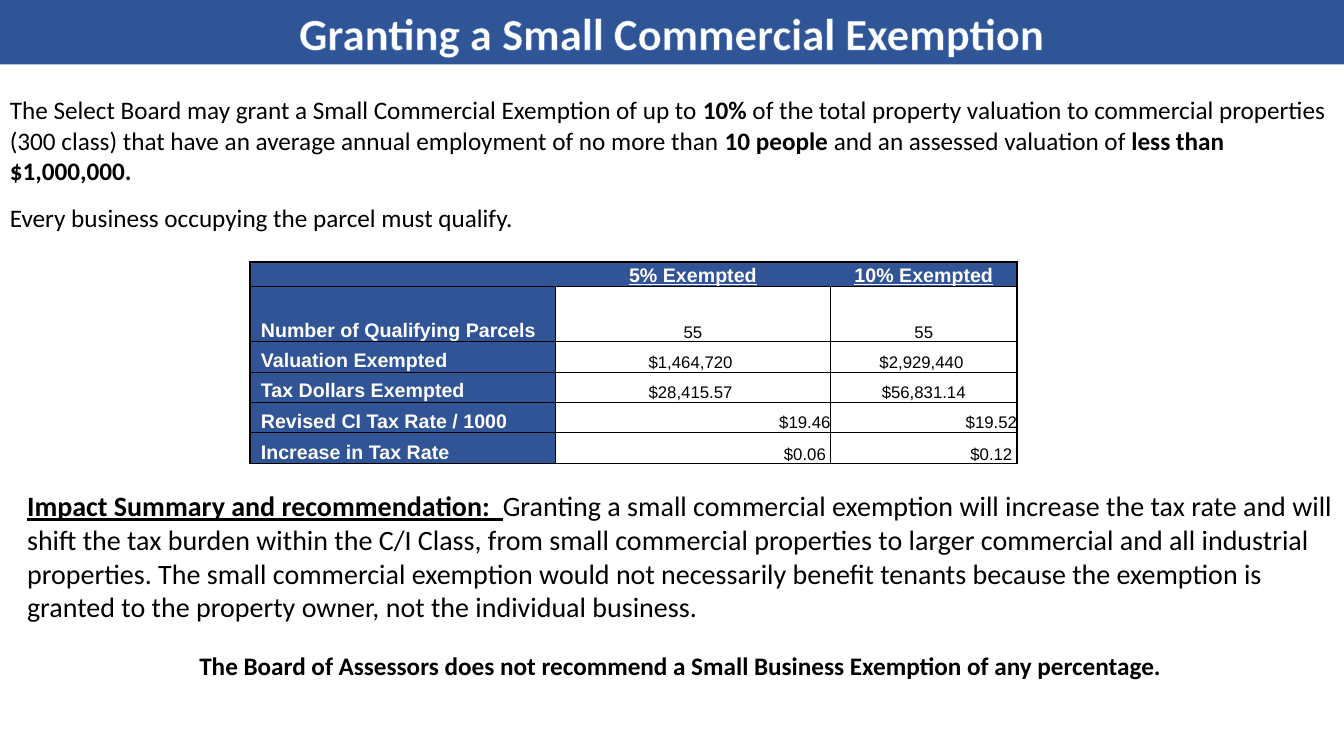
from dataclasses import dataclass, field
from typing import Any

import lxml.etree
import pptx
import pptx.dml.color
import pptx.enum.text
import pptx.oxml.ns
import pptx.util

COLUMNS, ROWS = 160, 90
BLACK, WHITE = "000000", "FFFFFF"
TITLE_BLUE, TABLE_BLUE, OUTLINE_BLUE = "2F5597", "305496", "4472C4"
THIN, THICK = 0.5, 1
ALIGN = pptx.enum.text.PP_ALIGN
ANCHOR = pptx.enum.text.MSO_ANCHOR
NO_MARGINS = dict.fromkeys(("margin_left", "margin_top", "margin_right", "margin_bottom"), 0)

deck = pptx.Presentation()
deck.slide_width = pptx.util.Inches(40 / 3)
deck.slide_height = pptx.util.Inches(7.5)


@dataclass
class Span:
    text: str
    bold: bool = False
    underline: bool = False
    size: float = 18
    font: str = "Calibri"
    color: str = BLACK


@dataclass
class Para:
    spans: list[Span]
    format: dict[str, Any] = field(default_factory=dict)


@dataclass
class Area:
    column: float
    row: float
    columns: float
    rows: float


@dataclass
class TextBlock:
    area: Area
    paras: list[Para]


TITLE_AREA = Area(0, 0, COLUMNS, 7.68)
TITLE = Para([Span("Granting a Small Commercial Exemption", True, size=32, color=WHITE)],
             {"alignment": ALIGN.CENTER})

TEXT_BLOCKS = [
    TextBlock(Area(0, 10.68, 159.6, 19.8), [
        Para([
            Span("The Select Board may grant a Small Commercial Exemption of up to "),
            Span("10%", True),
            Span(" of the total property valuation to commercial properties (300 class) "
                 "that have an average annual employment of no more than "),
            Span("10 people ", True),
            Span("and an assessed valuation of "),
            Span("less than $1,000,000.", True),
        ]),
        Para([Span("Every business occupying the parcel must qualify.")],
             {"space_before": pptx.util.Pt(12)}),
    ]),
    TextBlock(Area(2.04, 57.6, 157.96, 24.24), [
        Para([
            Span("Impact Summary and recommendation:  ", True, True, 20),
            Span("Granting a small commercial exemption will increase the tax rate and will "
                 "shift the tax burden within the C/I Class, from small commercial properties "
                 "to larger commercial and all industrial properties. The small commercial "
                 "exemption would not necessarily benefit tenants because the exemption is "
                 "granted to the property owner, not the individual business.", size=20),
        ]),
        Para([Span("The Board of Assessors does not recommend a Small Business Exemption "
                   "of any percentage.", True)],
             {"alignment": ALIGN.CENTER, "space_before": pptx.util.Pt(19.5)}),
    ]),
]

TABLE_COLUMNS = [36.36, 32.76, 22.2]
TABLE_ROWS = [2.88, 6.6, 3.6, 3.6, 3.6, 3.72]
TABLE_AREA = Area(29.76, 31.2, sum(TABLE_COLUMNS), sum(TABLE_ROWS))
TABLE_TEXT = [
    ("", "5% Exempted", "10% Exempted"),
    ("Number of Qualifying Parcels", "55", "55"),
    ("Valuation Exempted", "$1,464,720 ", "$2,929,440 "),
    ("Tax Dollars Exempted", "$28,415.57 ", "$56,831.14"),
    ("Revised CI Tax Rate / 1000", "$19.46", "$19.52"),
    ("Increase in Tax Rate", "$0.06 ", "$0.12 "),
]
FIRST_RATE_ROW = 4


def across(columns: float) -> int:
    return round(deck.slide_width * columns / COLUMNS)


def down(rows: float) -> int:
    return round(deck.slide_height * rows / ROWS)


def place(area: Area) -> tuple[int, int, int, int]:
    return across(area.column), down(area.row), across(area.columns), down(area.rows)


def rgb(color: str) -> pptx.dml.color.RGBColor:
    return pptx.dml.color.RGBColor.from_string(color)


def apply(target: Any, values: dict[str, Any]) -> None:
    for name, value in values.items():
        setattr(target, name, value)


def add_element(parent: Any, tag: str, **attributes: str) -> Any:
    return lxml.etree.SubElement(parent, pptx.oxml.ns.qn(tag), attributes)


def add_line(parent: Any, tag: str, width: float, color: str) -> Any:
    line = add_element(parent, tag, w=str(int(pptx.util.Pt(width))))
    if width:
        add_element(add_element(line, "a:solidFill"), "a:srgbClr", val=color)
    else:
        add_element(line, "a:noFill")
    return line


def write(frame: Any, paras: list[Para]) -> None:
    for index, content in enumerate(paras):
        para = frame.add_paragraph() if index else frame.paragraphs[0]
        apply(para, content.format)
        for piece in content.spans:
            span = para.add_run()
            span.text = piece.text
            apply(span.font, {"name": piece.font, "size": pptx.util.Pt(piece.size),
                              "bold": piece.bold, "underline": piece.underline})
            span.font.color.rgb = rgb(piece.color)


def draw_title(page: Any) -> None:
    title = page.shapes.title
    apply(title, dict(zip(("left", "top", "width", "height"), place(TITLE_AREA))))
    title.fill.solid()
    title.fill.fore_color.rgb = rgb(TITLE_BLUE)
    apply(title.text_frame, {"word_wrap": True, "vertical_anchor": ANCHOR.MIDDLE,
                             "auto_size": pptx.enum.text.MSO_AUTO_SIZE.NONE})
    write(title.text_frame, [TITLE])
    properties = title.text_frame.paragraphs[0].runs[0].font._element
    properties.insert(0, add_line(properties, "a:ln", 0.8, OUTLINE_BLUE))


def draw_text(page: Any, block: TextBlock) -> None:
    box = page.shapes.add_textbox(*place(block.area))
    box.text_frame.word_wrap = True
    write(box.text_frame, block.paras)


def border_widths(row: int, column: int) -> dict[str, float]:
    last = len(TABLE_COLUMNS) - 1
    inner = THIN if row else 0
    return {
        "a:lnL": THICK if column == 0 else inner,
        "a:lnR": THICK if column == last else inner,
        "a:lnT": THIN if row else THICK,
        "a:lnB": THIN,
    }


def draw_cell(cell: Any, row: int, column: int, text: str) -> None:
    heading = row == 0 or column == 0
    apply(cell, {**NO_MARGINS, "vertical_anchor": ANCHOR.BOTTOM})
    if column == 0:
        cell.margin_left = across(1.3)
    for tag, width in border_widths(row, column).items():
        add_line(cell._tc.get_or_add_tcPr(), tag, width, BLACK)
    if heading:
        cell.fill.solid()
        cell.fill.fore_color.rgb = rgb(TABLE_BLUE)
    else:
        cell.fill.background()
    if not text:
        add_element(cell.text_frame.paragraphs[0]._p, "a:endParaRPr", sz="1400")
        return
    if column == 0:
        alignment = ALIGN.LEFT
    else:
        alignment = ALIGN.RIGHT if row >= FIRST_RATE_ROW else ALIGN.CENTER
    span = Span(text, heading, row == 0, 14 if heading else 12, "Arial",
                WHITE if heading else BLACK)
    write(cell.text_frame, [Para([span], {"alignment": alignment})])


def draw_table(page: Any) -> None:
    table = page.shapes.add_table(len(TABLE_ROWS), len(TABLE_COLUMNS), *place(TABLE_AREA)).table
    apply(table, {"first_row": False, "horz_banding": False})
    for column, share in zip(table.columns, TABLE_COLUMNS):
        column.width = across(share)
    for row, share in zip(table.rows, TABLE_ROWS):
        row.height = down(share)
    for row, texts in enumerate(TABLE_TEXT):
        for column, text in enumerate(texts):
            draw_cell(table.cell(row, column), row, column, text)


def main() -> None:
    page = deck.slides.add_slide(deck.slide_layouts.get_by_name("Title Only"))
    draw_title(page)
    for block in TEXT_BLOCKS:
        draw_text(page, block)
    draw_table(page)
    deck.save("out.pptx")


if __name__ == "__main__":
    main()
